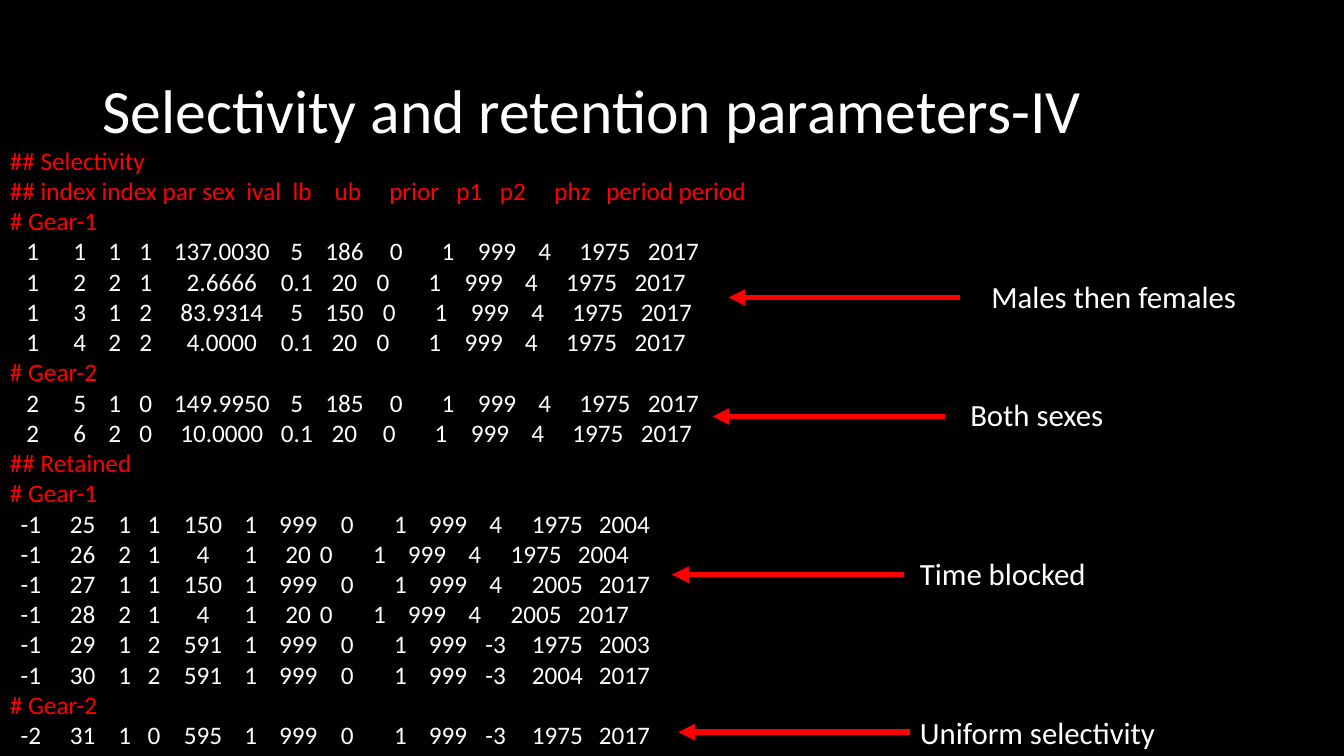
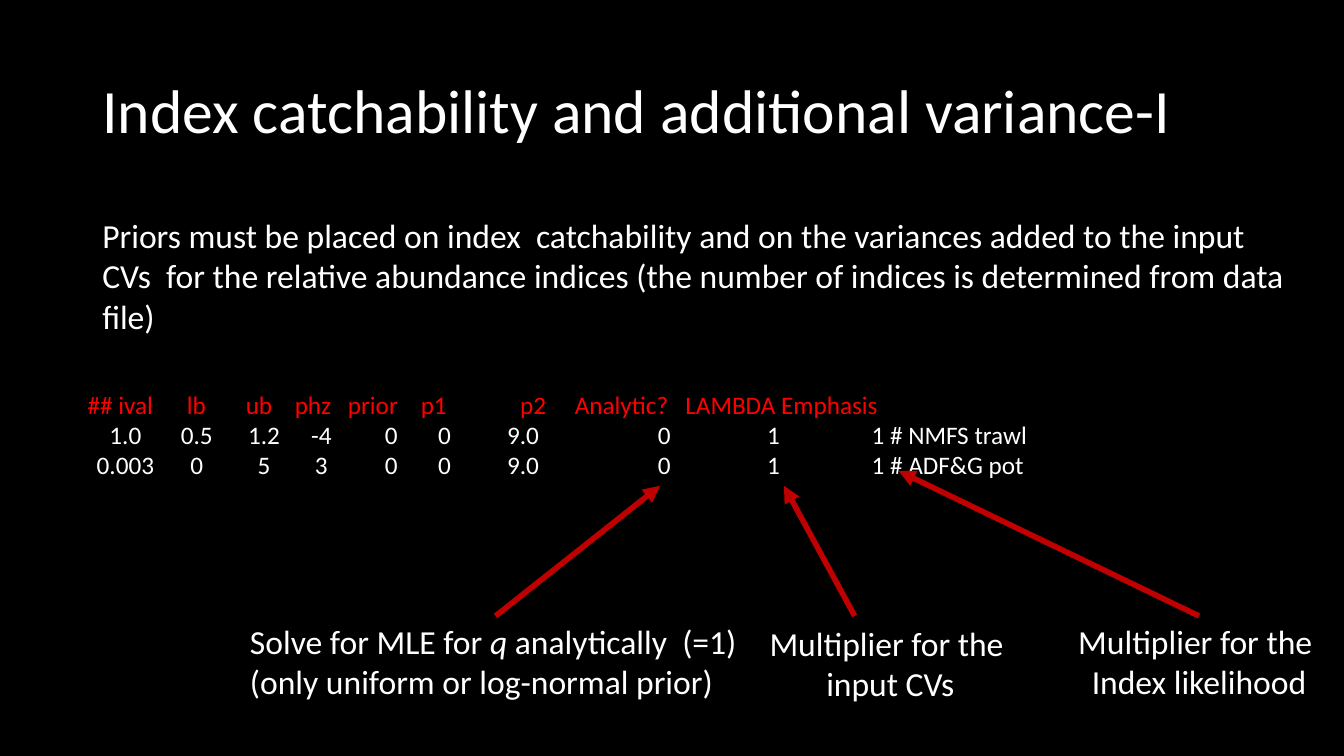
"""Build two slides on selectivity parameters and index catchability."""
from lxml import etree
from pptx import Presentation
from pptx.dml.color import RGBColor
from pptx.enum.shapes import MSO_CONNECTOR
from pptx.enum.text import MSO_ANCHOR, MSO_AUTO_SIZE, PP_ALIGN
from pptx.oxml.ns import qn
from pptx.util import Pt

C = {"back": "000000", "text": "FFFFFF", "comment": "FF0000", "arrow": "C00000"}
LEFT, CENTER = PP_ALIGN.LEFT, PP_ALIGN.CENTER


def write(tf, text, size=18, color="text", align=LEFT, spacing=None, tabs=(), tab_align="ctr"):
    """Fill the next paragraph; words between asterisks are italic."""
    p = tf.paragraphs[0]
    if p.runs:
        p = tf.add_paragraph()
    p.alignment = align
    if spacing:
        p.line_spacing = spacing
    if tabs:
        tab_list = etree.SubElement(p._p.get_or_add_pPr(), qn("a:tabLst"))
        for pos in tabs:
            etree.SubElement(tab_list, qn("a:tab"), pos=str(Pt(pos)), algn=tab_align)
    for i, part in enumerate(text.split("*")):
        r = p.add_run()
        r.text = part.replace("|", "\t")
        r.font.name = "Calibri"
        r.font.size = Pt(size)
        r.font.color.rgb = RGBColor.from_string(C[color])
        if i % 2:
            r.font.italic = True


def add_box(s, box, wrap=True):
    """Add an empty text box and return it."""
    sp = s.shapes.add_textbox(*(Pt(v) for v in box))
    sp.text_frame.word_wrap = wrap
    sp.text_frame.auto_size = MSO_AUTO_SIZE.SHAPE_TO_FIT_TEXT
    return sp


prs = Presentation()
prs.slide_width, prs.slide_height = Pt(960), Pt(540)
fill = prs.slide_master.background.fill
fill.solid()
fill.fore_color.rgb = RGBColor.from_string(C["back"])

layout = prs.slide_layouts.get_by_name("Title Only")
title = layout.placeholders[0]
title.left, title.top, title.width, title.height = Pt(66), Pt(29), Pt(828), Pt(104.4)
title.text_frame.vertical_anchor = MSO_ANCHOR.MIDDLE

slides = []
for text in ("Selectivity and retention parameters-IV", "Index catchability and additional variance-I"):
    s = prs.slides.add_slide(layout)
    write(s.shapes.title.text_frame, text, size=44, spacing=0.9)
    slides.append(s)
selectivity, catchability = slides

tf = add_box(catchability, (66, 150, 869, 94)).text_frame
write(tf, "Priors must be placed on index  catchability and on the variances added to the input "
      "CVs  for the relative abundance indices (the number of indices is determined from data file)",
      size=24)

TABS = {
    "selectivity head": (169, 202, 232, 271, 319, 350, 389, 426),
    "selectivity": (16.4, 50, 75, 97, 151.4, 205, 239, 276, 313, 348, 382, 425, 474),
    "retained": (15, 52, 82, 103, 138, 172, 206, 241, 279, 313, 347, 391, 439),
    "index head": (71, 113, 148, 186, 238, 309, 348, 427),
    "index": (27, 78, 126, 167, 217, 255, 311, 412, 490),
}
SHIFT_FROM = 7

listings = [
    (selectivity, (0, 100, 571, 443.5), [
        ("selectivity head", 0, "## Selectivity"),
        ("selectivity head", 0, "## index index par sex|ival|lb|ub|prior|p1|p2|phz|period period"),
        ("selectivity head", 0, "# Gear-1"),
        ("selectivity", 0, "|1|1|1|1|137.0030|5|186|0|1|999|4|1975|2017"),
        ("selectivity", -9.5, "|1|2|2|1|2.6666|0.1|20|0|1|999|4|1975|2017"),
        ("selectivity", -5, "|1|3|1|2|83.9314|5|150|0|1|999|4|1975|2017"),
        ("selectivity", -9.5, "|1|4|2|2|4.0000|0.1|20|0|1|999|4|1975|2017"),
        ("selectivity head", 0, "# Gear-2"),
        ("selectivity", 0, "|2|5|1|0|149.9950|5|185|0|1|999|4|1975|2017"),
        ("selectivity", -5, "|2|6|2|0|10.0000|0.1|20|0|1|999|4|1975|2017"),
        ("selectivity head", 0, "## Retained"),
        ("selectivity head", 0, "# Gear-1"),
        ("retained", 0, "|-1|25|1|1|150|1|999|0|1|999|4|1975|2004"),
        ("retained", -15, "|-1|26|2|1|4|1|20|0|1|999|4|1975|2004"),
        ("retained", 0, "|-1|27|1|1|150|1|999|0|1|999|4|2005|2017"),
        ("retained", -15, "|-1|28|2|1|4|1|20|0|1|999|4|2005|2017"),
        ("retained", 0, "|-1|29|1|2|591|1|999|0|1|999|-3|1975|2003"),
        ("retained", 0, "|-1|30|1|2|591|1|999|0|1|999|-3|2004|2017"),
        ("selectivity head", 0, "# Gear-2"),
        ("retained", 0, "|-2|31|1|0|595|1|999|0|1|999|-3|1975|2017"),
    ]),
    (catchability, (55.5, 274.5, 726, 73), [
        ("index head", 0, "## ival|lb|ub|phz|prior|p1|p2|Analytic?|LAMBDA Emphasis"),
        ("index", 0, "|1.0|0.5|1.2|-4|0|0|9.0|0|1|1 # NMFS trawl"),
        ("index", 0, "|0.003|0|5|3|0|0|9.0|0|1|1 # ADF&G pot"),
    ]),
]
for s, box, rows in listings:
    tf = add_box(s, box).text_frame
    for kind, shift, text in rows:
        head = kind.endswith("head")
        tabs = [t + shift * (i >= SHIFT_FROM) for i, t in enumerate(TABS[kind])]
        write(tf, text, color="comment" if head else "text", tabs=tabs if "|" in text else (),
              tab_align="l" if head else "ctr")
        if kind == "index":
            tab_list = tf.paragraphs[-1]._p.pPr.find(qn("a:tabLst"))
            etree.SubElement(tab_list, qn("a:tab"), pos=str(Pt(560)), algn="l")

TOP, SIDE = 0, 1
label_groups = [
    (selectivity, 22, "comment", [
        ((701, 195, 197, 34), ["Males then females"], LEFT, (686, 212.5), (520.5, 212.5), None),
        ((686, 279, 111, 34), ["Both sexes"], LEFT, (675, 297.5), (509, 297.5), None),
        ((650, 393, 134, 34), ["Time blocked"], LEFT, (646, 410.5), (480, 410.5), None),
        ((650, 506, 184, 34), ["Uniform selectivity"], LEFT, (650, 523), (484.5, 523), SIDE),
    ]),
    (catchability, 24, "arrow", [
        ((171.5, 440, 365, 65.5),
         ["Solve for MLE for *q* analytically  (=1)", "(only uniform or log-normal prior)"],
         LEFT, (354, 440), (471.5, 347), TOP),
        ((541.5, 441.5, 189, 65.5), ["Multiplier for the ", "input CVs"],
         CENTER, (610.5, 440), (560, 347), None),
        ((762, 440, 189, 65.5), ["Multiplier for the ", "Index likelihood"],
         CENTER, (856.5, 440), (642, 336.5), TOP),
    ]),
]
for s, size, color, labels in label_groups:
    for box, lines, align, start, end, site in labels:
        sp = add_box(s, box, wrap=False)
        for text in lines:
            write(sp.text_frame, text, size=size, align=align)
        cxn = s.shapes.add_connector(MSO_CONNECTOR.STRAIGHT, *(Pt(v) for v in start + end))
        if site is not None:
            cxn.begin_connect(sp, site)
        cxn.line.color.rgb = RGBColor.from_string(C[color])
        cxn.line.width = Pt(4)
        sp_pr = cxn._element.spPr
        etree.SubElement(sp_pr.find(qn("a:ln")), qn("a:tailEnd"), type="triangle")
        etree.SubElement(sp_pr, qn("a:effectLst"))

prs.save("out.pptx")
